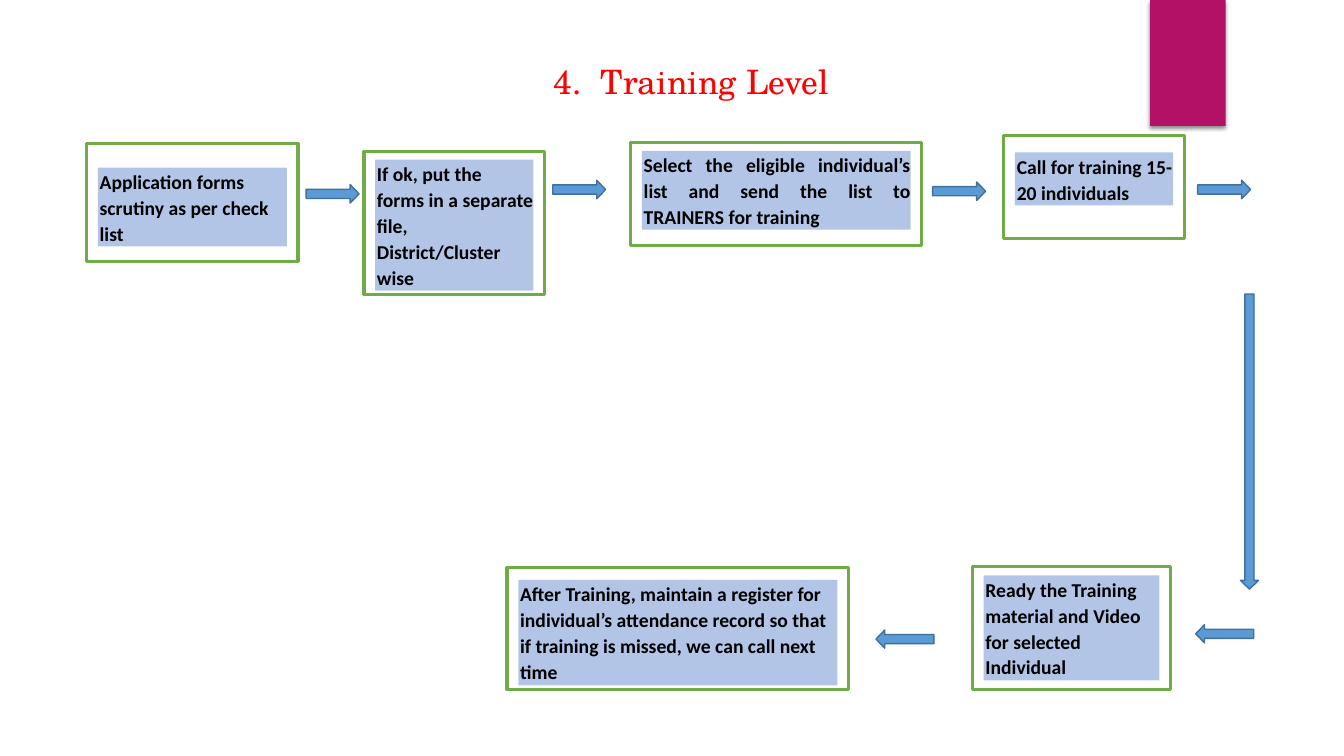
import pptx
import pptx.util
import pptx.oxml
import pptx.dml.color
import pptx.enum.shapes
import pptx.enum.text

Pt = pptx.util.Pt
KIND = pptx.enum.shapes.MSO_SHAPE
ALIGN = pptx.enum.text.PP_ALIGN


def paint(shape, fill=None, line=None, width=1):
    """Set fill and outline; None leaves that part clear."""
    shape.shadow.inherit = False
    for part, color in ((shape.fill, fill), (shape.line.fill, line)):
        if color:
            part.solid()
            part.fore_color.rgb = pptx.dml.color.RGBColor.from_string(color)
        else:
            part.background()
    if line:
        shape.line.width = Pt(width)


def write(shape, text, font="Calibri", size=14, color="000000", bold=True,
          align=ALIGN.LEFT, space=1.1, indent=1.3):
    frame = shape.text_frame
    frame.word_wrap = True
    frame.auto_size = pptx.enum.text.MSO_AUTO_SIZE.NONE
    frame.vertical_anchor = pptx.enum.text.MSO_ANCHOR.TOP
    frame.margin_top = frame.margin_right = frame.margin_bottom = 0
    frame.margin_left = Pt(indent)
    frame.text = text
    para = frame.paragraphs[0]
    para.alignment = align
    para.line_spacing = space
    para.font.name = font
    para.font.size = Pt(size)
    para.font.bold = bold
    para.font.color.rgb = pptx.dml.color.RGBColor.from_string(color)


deck = pptx.Presentation()
deck.slide_width, deck.slide_height = Pt(960), Pt(540)
slide = deck.slides.add_slide(deck.slide_layouts[5])
shapes = slide.shapes

title = shapes.title
title.left, title.top, title.width, title.height = Pt(394.6), Pt(43.2), Pt(211), Pt(28.8)
write(title, "4.  Training Level", font="TeX Gyre Schola", size=24,
      color="FF0000", bold=False, space=1, indent=0.7)

# Corner tab with a soft shadow below it
tab = shapes.add_shape(KIND.RECTANGLE, Pt(821.5), Pt(0), Pt(54), Pt(90))
paint(tab, fill="B31166")
effect = tab.fill._xPr.find(pptx.oxml.ns.qn("a:effectLst"))
effect.append(pptx.oxml.parse_xml(
    '<a:outerShdw xmlns:a="http://schemas.openxmlformats.org/drawingml/2006/main"'
    ' blurRad="38100" dist="25400" dir="5400000" rotWithShape="0">'
    '<a:srgbClr val="000000"><a:alpha val="45000"/></a:srgbClr></a:outerShdw>'))

# Each step: frame left, top, width, height; panel top, height; text; alignment
inset = 8
steps = [
    (61.9, 102.7, 151, 84, 119.8, 56.2,
     "Application forms scrutiny as per check list", ALIGN.LEFT),
    (260, 108.2, 129, 102, 114, 93.6,
     "If ok, put the forms in a separate file, District/Cluster wise", ALIGN.LEFT),
    (450.5, 101.6, 208, 74, 107.8, 56.2,
     "Select the eligible individual’s list and send the list to "
     "TRAINERS for training", ALIGN.JUSTIFY),
    (717, 96.6, 129, 74, 108.8, 38,
     "Call for training 15- 20 individuals", ALIGN.LEFT),
    (694.6, 404.8, 141.6, 87.8, 411, 75,
     "Ready the Training material and Video for selected Individual", ALIGN.LEFT),
    (362.2, 405.4, 244, 87.2, 414.2, 75.4,
     "After Training, maintain a register for individual’s attendance record "
     "so that if training is missed, we can call next time", ALIGN.LEFT),
]
for left, top, width, height, start, depth, text, align in steps:
    frame = shapes.add_shape(KIND.RECTANGLE, Pt(left), Pt(top), Pt(width), Pt(height))
    paint(frame, line="6FAC46", width=2.25)
    panel = shapes.add_shape(KIND.RECTANGLE, Pt(left + inset), Pt(start),
                             Pt(width - 2 * inset), Pt(depth))
    paint(panel, fill="B3C5E7")
    write(panel, text, align=align)

# Arrows between the steps, in reading order
arrows = [
    (KIND.RIGHT_ARROW, 218.7, 131.9, 37.8, 13.2),
    (KIND.RIGHT_ARROW, 394.8, 128.8, 37.8, 13.2),
    (KIND.RIGHT_ARROW, 666.2, 130, 37.8, 13.2),
    (KIND.RIGHT_ARROW, 855.5, 128.8, 37.8, 13.2),
    (KIND.DOWN_ARROW, 886, 210, 13, 210.8),
    (KIND.LEFT_ARROW, 854.1, 446.2, 41.4, 13),
    (KIND.LEFT_ARROW, 625.7, 450, 41.4, 13),
]
for kind, left, top, width, height in arrows:
    arrow = shapes.add_shape(kind, Pt(left), Pt(top), Pt(width), Pt(height))
    arrow.adjustments[1] = 0.48
    paint(arrow, fill="5B9AD5", line="40709B")

deck.save("out.pptx")
